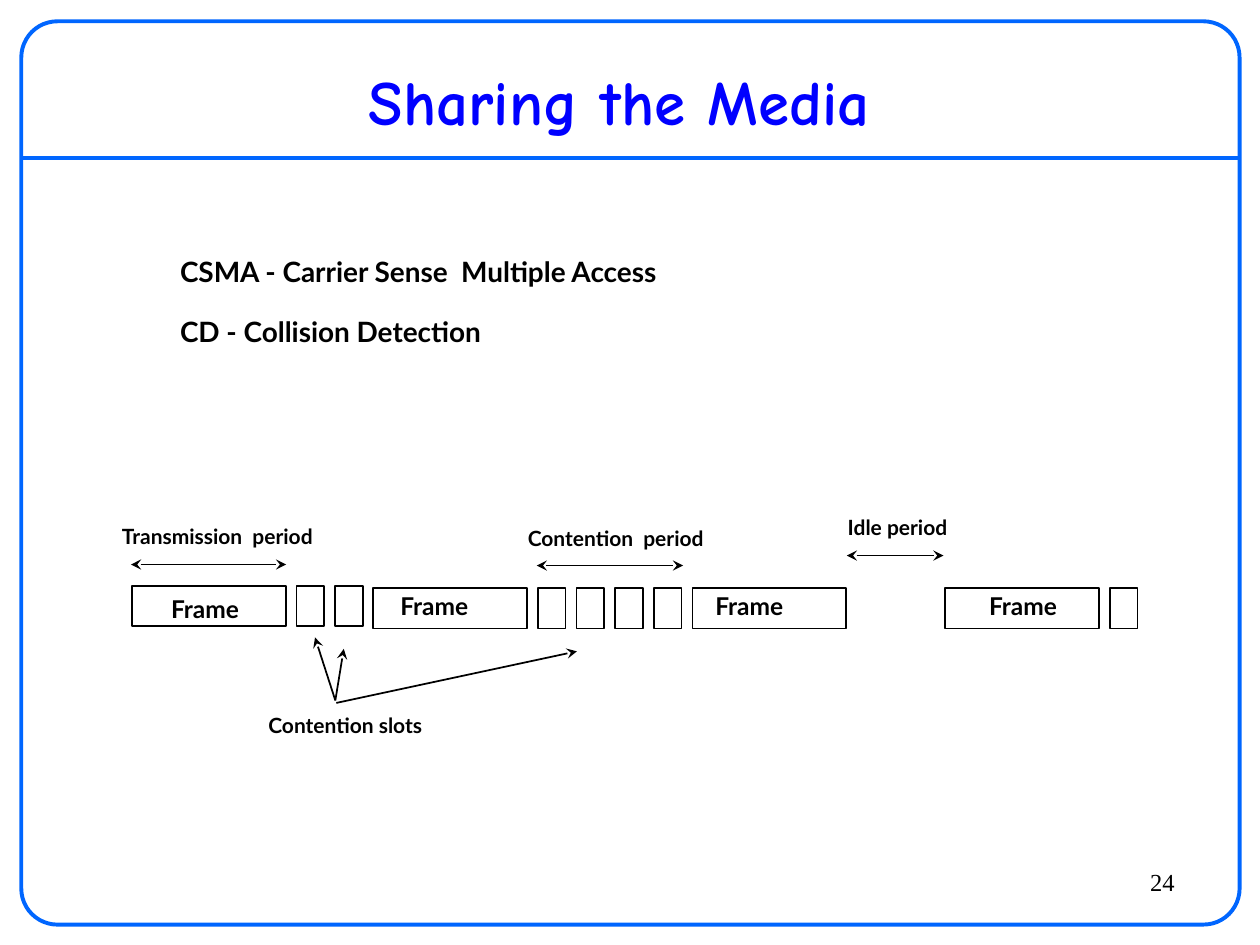
from lxml.etree import SubElement
from pptx import Presentation
from pptx.dml.color import RGBColor as RGB
from pptx.enum.shapes import MSO_CONNECTOR as CONN, MSO_SHAPE as SHAPE
from pptx.enum.text import MSO_ANCHOR as ANCHOR, PP_ALIGN as ALIGN
from pptx.oxml.ns import qn
from pptx.util import Cm, Pt

# Theme: line and type formats
BLACK, BLUE, BORDER = RGB(0, 0, 0), RGB(0, 0, 255), RGB(0, 0x66, 255)
LATO = {"name": "Lato", "bold": True, "color": BLACK}
THEME = {
    "border": (BORDER, 2.25),
    "thin": (BLACK, 1),
    "title": {"name": "Comic Neue", "bold": True, "color": BLUE, "size": Pt(36)},
    "body": {**LATO, "size": Pt(16)},
    "frame": {**LATO, "size": Pt(14)},
    "label": {**LATO, "size": Pt(12)},
    "number": {"name": "Times New Roman", "color": BLACK, "size": Pt(14)},
}

# Content, lengths in cm
TITLE = "Sharing the Media"
TERMS = ["CSMA - Carrier Sense  Multiple Access", "CD - Collision Detection"]
NUMBER = "24"
FRAME, SLOT, GAP, HEIGHT = 3.1, 0.56, 0.22, 0.81
ROWS = [  # start, top, blocks from left to right
    (2.66, 11.81, [FRAME, SLOT, SLOT]),
    (7.52, 11.86, [FRAME, SLOT, SLOT, SLOT, SLOT, FRAME]),
    (19.05, 11.86, [FRAME, SLOT]),
]
FRAME_LABELS = [(3.2, 11.91), (7.82, 11.86), (14.17, 11.86), (19.69, 11.86)]
LABELS = [  # text, left, top, width
    ("Transmission  period", 2.21, 10.49, 4.93),
    ("Contention  period", 10.39, 10.52, 4.47),
    ("Idle period", 16.84, 10.31, 2.84),
    ("Contention slots", 5.16, 14.3, 3.99),
]
PERIODS = [(2.64, 5.77, 11.38), (10.82, 13.77, 11.4), (17.07, 19.02, 11.2)]
POINTERS = [  # from, to
    ((6.76, 14.12), (6.35, 12.85)),
    ((6.76, 14.12), (6.93, 13.08)),
    ((6.78, 14.17), (11.63, 13.13)),
]


def set_line(sp, style):
    sp.line.color.rgb, width = THEME[style]
    sp.line.width = Pt(width)


def add_box(kind, x, y, w, h, style):
    sp = shapes.add_shape(kind, Cm(x), Cm(y), Cm(w), Cm(h))
    sp.shadow.inherit = False
    sp.fill.background()
    set_line(sp, style)
    return sp


def add_line(start, end, style, *ends):
    sp = shapes.add_connector(CONN.STRAIGHT, *map(Cm, start + end))
    set_line(sp, style)
    ln = sp.line._get_or_add_ln()
    for tag in ends:
        SubElement(ln, qn(tag), type="stealth")
    SubElement(sp._element.spPr, qn("a:effectLst"))


def add_text(lines, x, y, w, h, style, wrap=False, anchor=ANCHOR.TOP, **para):
    tf = shapes.add_textbox(Cm(x), Cm(y), Cm(w), Cm(h)).text_frame
    tf.word_wrap, tf.vertical_anchor = wrap, anchor
    for i, line in enumerate(lines):
        p = tf.add_paragraph() if i else tf.paragraphs[0]
        for key, value in para.items():
            setattr(p, key, value)
        if i:
            p.space_before = Pt(17)
        r = p.add_run()
        r.text = line
        for key, value in THEME[style].items():
            if key == "color":
                r.font.color.rgb = value
            else:
                setattr(r.font, key, value)


prs = Presentation()
prs.slide_width, prs.slide_height = Cm(25.4), Cm(19.05)
shapes = prs.slides.add_slide(prs.slide_layouts[6]).shapes

# Slide border and title rule
add_line((0.43, 3.18), (24.97, 3.18), "border")
add_box(SHAPE.ROUNDED_RECTANGLE, 0.43, 0.43, 24.56, 18.21, "border").adjustments[0] = 0.04

# Title, terms and slide number
add_text([TITLE], 0.84, 1.07, 23.29, 1.9, "title", True, ANCHOR.MIDDLE, alignment=ALIGN.CENTER)
add_text(TERMS, 3.38, 5.08, 11.2, 2.08, "body", line_spacing=0.9)
add_text([NUMBER], 21.39, 17.35, 2.54, 1.07, "number", True, alignment=ALIGN.RIGHT)

# Timeline of frames and contention slots
for x, y, widths in ROWS:
    for w in widths:
        add_box(SHAPE.RECTANGLE, x, y, w, HEIGHT, "thin")
        x += w + GAP
for x, y in FRAME_LABELS:
    add_text(["Frame"], x, y, 2.08, 0.79, "frame", line_spacing=0.9)

# Labels, period arrows and pointers to slots
for text, x, y, w in LABELS:
    add_text([text], x, y, w, 0.71, "label", line_spacing=0.9)
for x1, x2, y in PERIODS:
    add_line((x1, y), (x2, y), "thin", "a:headEnd", "a:tailEnd")
for start, end in POINTERS:
    add_line(start, end, "thin", "a:tailEnd")

prs.save("out.pptx")
